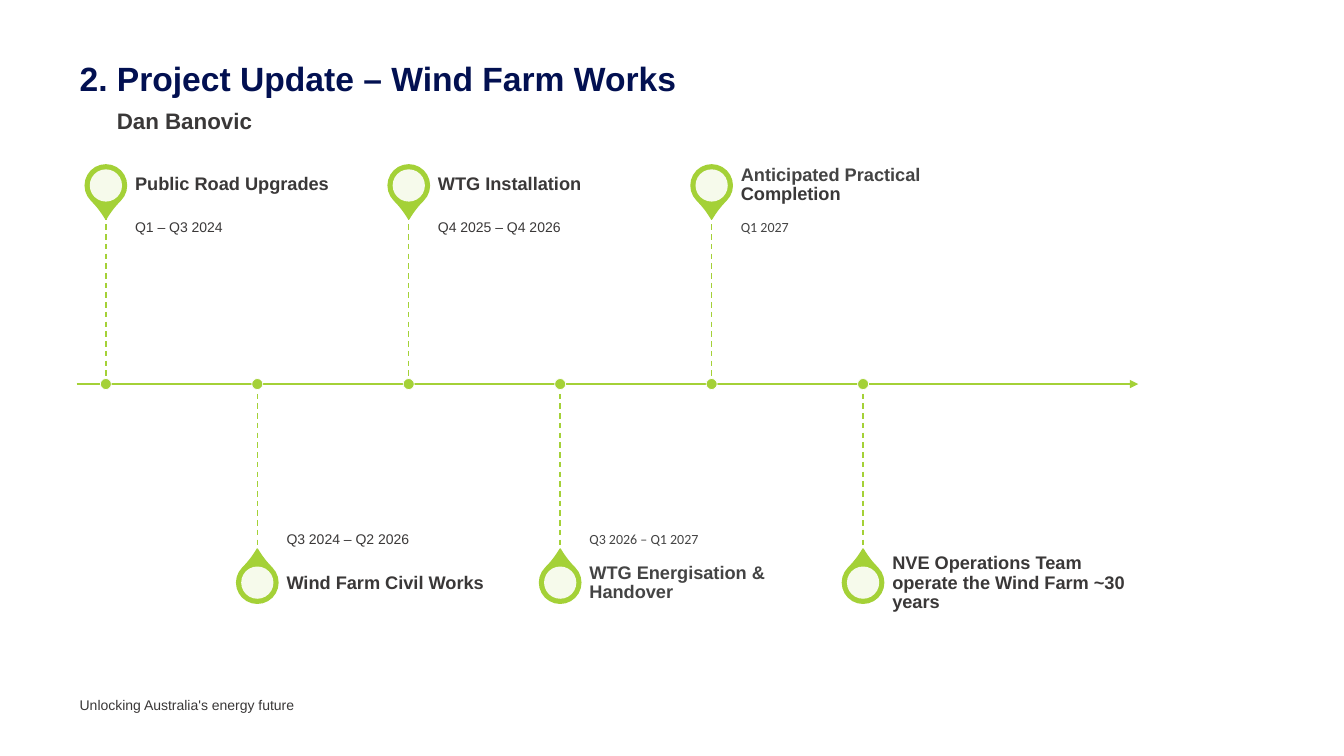
"""Build the wind farm works timeline slide."""
from dataclasses import dataclass

import pptx
import pptx.dml.color
import pptx.enum.dml
import pptx.enum.shapes
import pptx.enum.text
import pptx.oxml
import pptx.oxml.ns
import pptx.util
from pptx.dml.color import RGBColor
from pptx.enum.shapes import MSO_SHAPE
from pptx.enum.text import MSO_ANCHOR
from pptx.util import Inches

NAVY = RGBColor(0x02, 0x10, 0x51)
CHARCOAL = RGBColor(0x3A, 0x38, 0x38)
GREY = RGBColor(0x44, 0x44, 0x44)
GREEN = RGBColor(0xA4, 0xD1, 0x37)
WHITE = RGBColor(0xFF, 0xFF, 0xFF)

AXIS_Y = 3.81
STEM = 1.68
PIN_OFFSET = 1.97
FIRST_X = 1.05
PITCH = 1.502
LABEL_GAP = 0.29
LABEL_WIDTH = 2.44
HEADING_HEIGHT = 0.59


@dataclass(frozen=True)
class TextStyle:
    size: float
    color: RGBColor = CHARCOAL
    bold: bool = False
    font: str = "Arial"
    spacing: float = 0.9


@dataclass(frozen=True)
class Milestone:
    heading: str
    date: str = ""
    heading_color: RGBColor = CHARCOAL
    date_style: TextStyle = TextStyle(10)
    heading_end: str = ""


CALIBRI_DATE = TextStyle(10, GREY, font="Calibri")
MILESTONES = (
    Milestone("Public Road Upgrades", "Q1 – Q3 2024"),
    Milestone("Wind Farm Civil Works", "Q3 2024 – Q2 2026"),
    Milestone("WTG Installation", "Q4 2025 – Q4 2026"),
    Milestone("WTG Energisation & Handover", "Q3 2026 – Q1 2027", GREY, CALIBRI_DATE),
    Milestone("Anticipated Practical ", "Q1 2027", GREY, CALIBRI_DATE, "Completion"),
    Milestone("NVE Operations Team operate the Wind Farm ~30 years"),
)


def add_text(slide, text: str, box: tuple, style: TextStyle,
             anchor: MSO_ANCHOR = MSO_ANCHOR.TOP, insets: tuple = (0, 0, 0, 0)):
    """Add a wrapped text box and return its paragraph."""
    shape = slide.shapes.add_textbox(*map(Inches, box))
    frame = shape.text_frame
    frame.word_wrap = True
    frame.vertical_anchor = anchor
    (frame.margin_left, frame.margin_top,
     frame.margin_right, frame.margin_bottom) = map(Inches, insets)
    paragraph = frame.paragraphs[0]
    paragraph.line_spacing = style.spacing
    paragraph.add_run().text = text
    paragraph.font.name = style.font
    paragraph.font.size = pptx.util.Pt(style.size)
    paragraph.font.bold = style.bold
    paragraph.font.color.rgb = style.color
    return paragraph


def add_line(slide, start: tuple, end: tuple, width: float):
    """Add a green straight line without a shadow."""
    line = slide.shapes.add_connector(
        pptx.enum.shapes.MSO_CONNECTOR.STRAIGHT, *map(Inches, start + end))
    line.line.color.rgb = GREEN
    line.line.width = pptx.util.Pt(width)
    properties = line.line._get_or_add_ln().getparent()
    pptx.oxml.ns.qn("a:effectLst")
    properties.append(pptx.oxml.parse_xml(
        f'<a:effectLst {pptx.oxml.ns.nsdecls("a")}/>'))
    return line


def add_centred(slide, kind: MSO_SHAPE, x: float, y: float, size: float,
                fill: RGBColor, outline: RGBColor | None = None, width: float = 1):
    """Add a filled shape centred on a point."""
    shape = slide.shapes.add_shape(
        kind, Inches(x - size / 2), Inches(y - size / 2), Inches(size), Inches(size))
    shape.shadow.inherit = False
    shape.fill.solid()
    shape.fill.fore_color.rgb = fill
    if outline is None:
        shape.line.fill.background()
    else:
        shape.line.color.rgb = outline
        shape.line.width = pptx.util.Pt(width)
    return shape


def add_axis(slide) -> None:
    """Add the timeline arrow."""
    axis = add_line(slide, (0.76, AXIS_Y), (11.29, AXIS_Y), 1.5)
    axis.line._get_or_add_ln().append(pptx.oxml.parse_xml(
        f'<a:tailEnd {pptx.oxml.ns.nsdecls("a")} type="triangle"/>'))


def add_milestone(slide, milestone: Milestone, x: float, above: bool) -> None:
    """Add one pin with its stem, dot, heading and date."""
    side = -1 if above else 1
    pin_y = AXIS_Y + side * PIN_OFFSET
    stem_end = AXIS_Y + side * STEM
    pin = add_centred(slide, MSO_SHAPE.TEAR, x, pin_y, 0.41, GREEN, GREEN)
    pin.adjustments[0] = 1.15
    pin.rotation = 135 if above else 315
    disc = add_centred(slide, MSO_SHAPE.OVAL, x, pin_y, 0.32, WHITE)
    color = disc.fill._xPr.find(".//" + pptx.oxml.ns.qn("a:srgbClr"))
    color.append(pptx.oxml.parse_xml(
        f'<a:alpha {pptx.oxml.ns.nsdecls("a")} val="90000"/>'))

    left = x + LABEL_GAP
    if milestone.date:
        top = stem_end if above else AXIS_Y
        add_text(slide, milestone.date, (left, top, LABEL_WIDTH, STEM),
                 milestone.date_style,
                 MSO_ANCHOR.TOP if above else MSO_ANCHOR.BOTTOM,
                 (0, 0.07, 0.07, 0.1) if above else (0, 0.1, 0, 0.07))
    top = stem_end - HEADING_HEIGHT if above else stem_end
    heading = add_text(slide, milestone.heading,
                       (left, top, LABEL_WIDTH, HEADING_HEIGHT),
                       TextStyle(13, milestone.heading_color, True),
                       MSO_ANCHOR.MIDDLE, (0, 0, 0.09, 0))
    if milestone.heading_end:
        run = heading.add_run()
        run.text = milestone.heading_end
        run.font.color.rgb = CHARCOAL

    stem = add_line(slide, (x, stem_end), (x, AXIS_Y), 1)
    if not above:
        stem.begin_y, stem.end_y = Inches(AXIS_Y), Inches(stem_end)
    stem.line.dash_style = pptx.enum.dml.MSO_LINE.DASH
    add_centred(slide, MSO_SHAPE.OVAL, x, AXIS_Y, 0.11, GREEN, WHITE, 0.5)


def main() -> None:
    """Build and save the presentation."""
    presentation = pptx.Presentation()
    presentation.slide_width = Inches(13.33)
    presentation.slide_height = Inches(7.5)
    slide = presentation.slides.add_slide(presentation.slide_layouts[6])
    add_text(slide, "2. Project Update – Wind Farm Works",
             (0.79, 0.62, 10.97, 0.36), TextStyle(24, NAVY, True))
    add_text(slide, "Unlocking Australia's energy future",
             (0.79, 6.91, 10.35, 0.17), TextStyle(10, spacing=1.0), MSO_ANCHOR.MIDDLE)
    add_axis(slide)
    for index, milestone in enumerate(MILESTONES):
        add_milestone(slide, milestone, FIRST_X + index * PITCH, index % 2 == 0)
    add_text(slide, "Dan Banovic", (1.06, 1.01, 2.35, 0.37),
             TextStyle(16, bold=True, spacing=1.0), insets=(0.1, 0.05, 0.1, 0.05))
    presentation.save("out.pptx")


if __name__ == "__main__":
    main()
